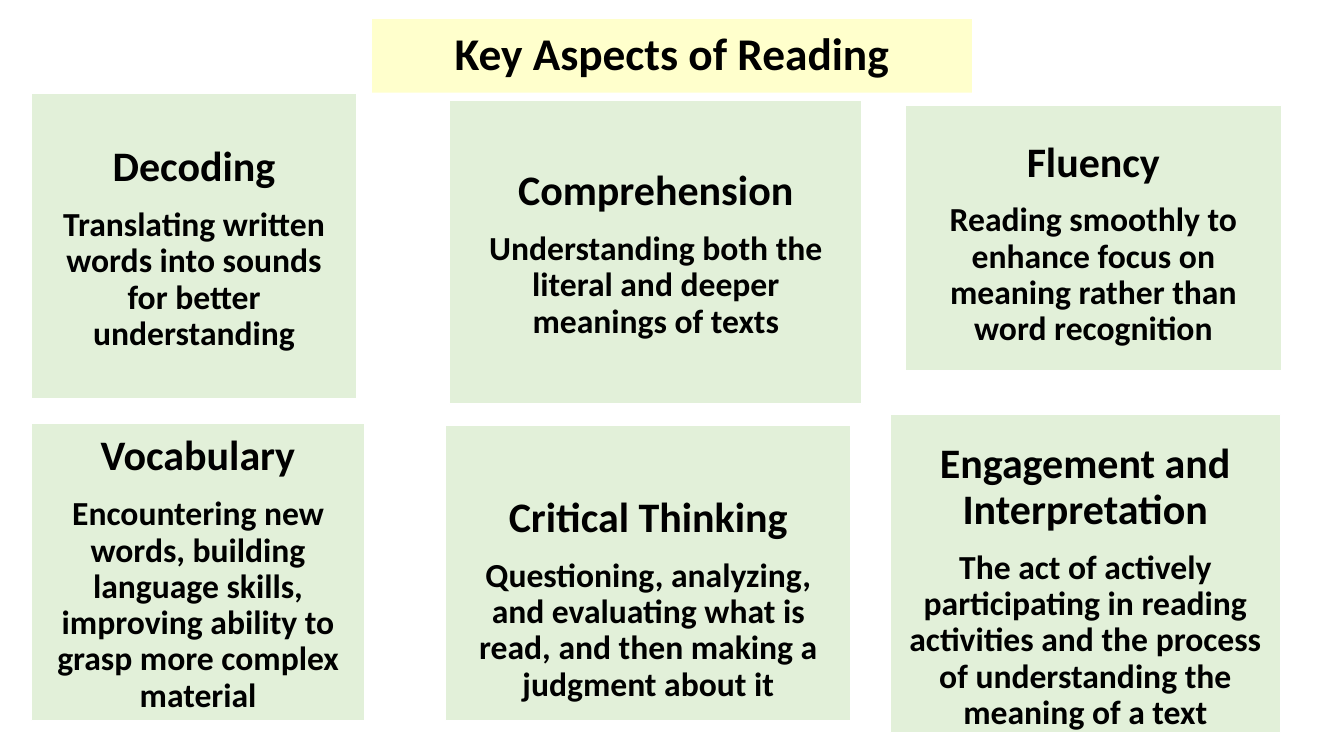
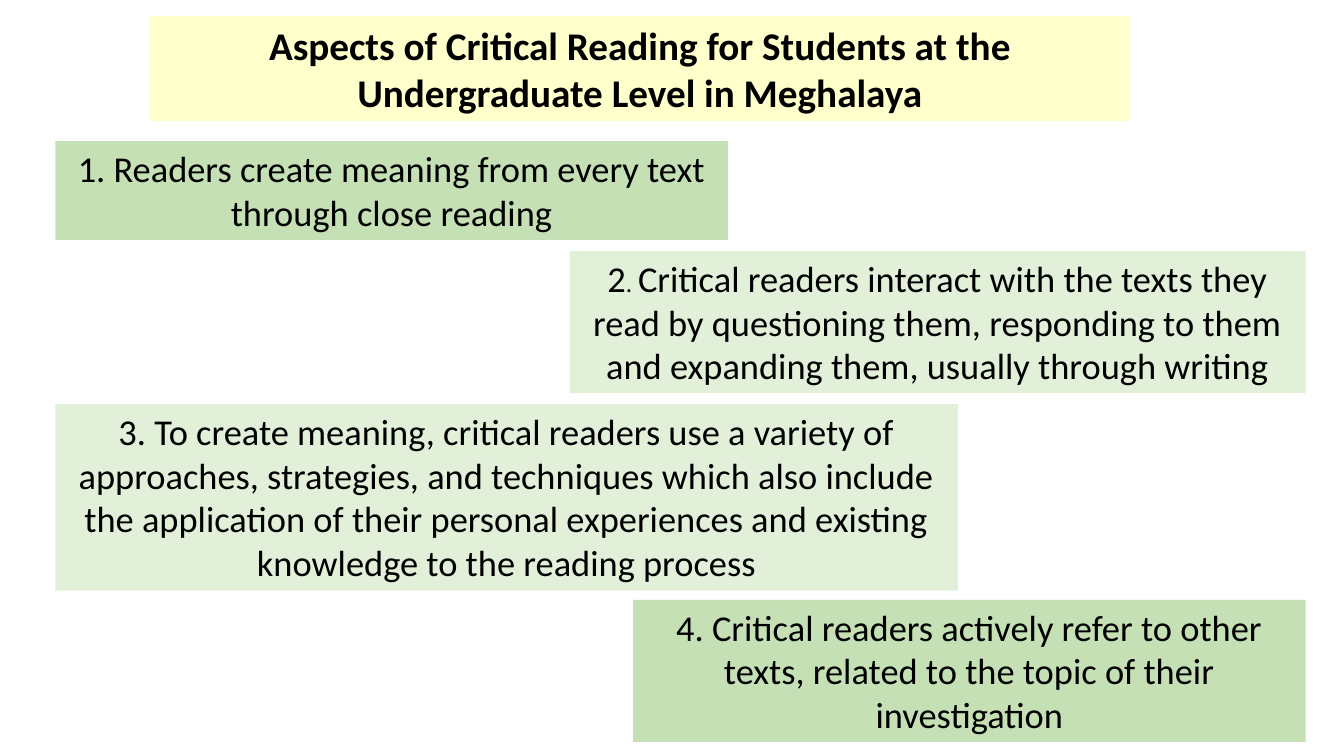
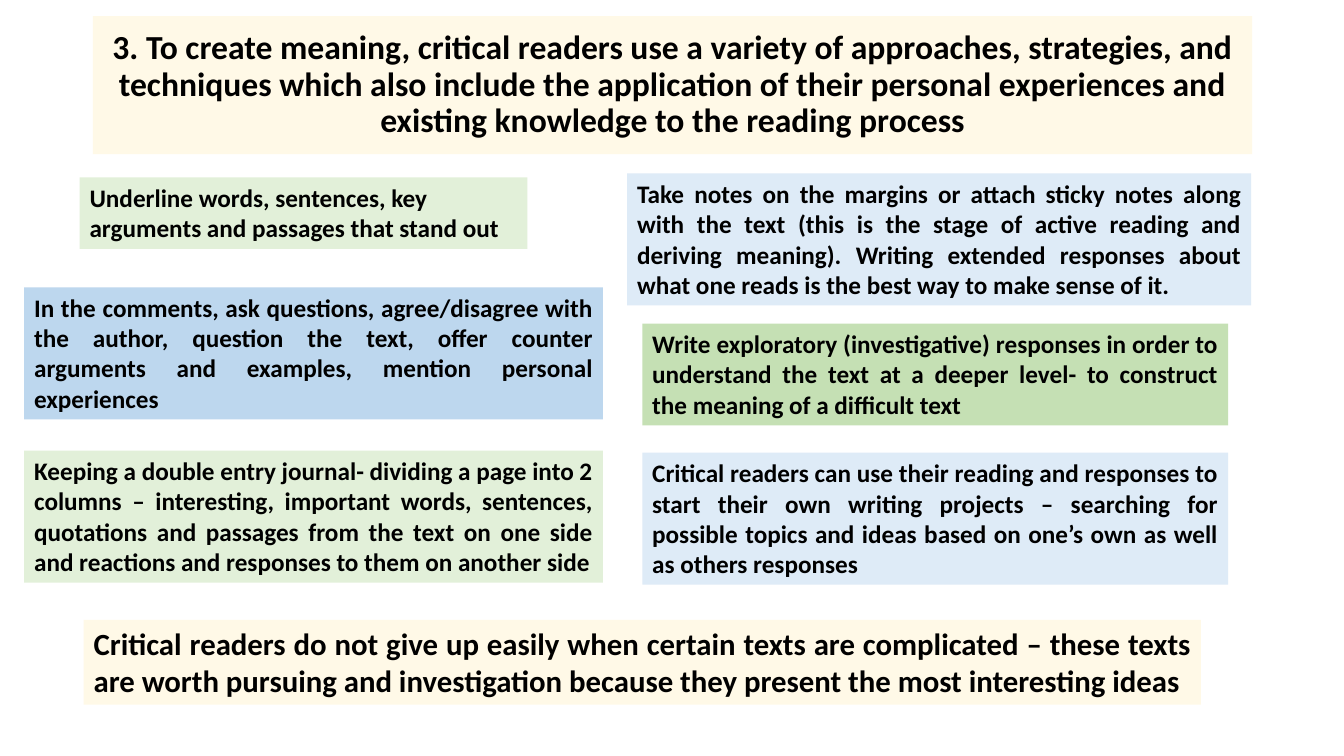
from dataclasses import dataclass

from pptx import Presentation
from pptx.dml.color import RGBColor
from pptx.enum import shapes, text
from pptx.util import Inches, Pt


@dataclass(frozen=True)
class Theme:
    font: str = "Calibri"
    ink: str = "000000"
    white: str = "FFFFFF"
    yellow: str = "FFFFCC"
    cream: str = "FFF9E7"
    pale_green: str = "E2F0D9"
    green: str = "C5E0B4"
    pale_blue: str = "DEEBF7"
    blue: str = "BDD7EE"
    title: float = 32.4
    long_title: int = 28
    statement_title: int = 24
    card_heading: int = 30
    card_body: int = 24
    point: int = 26
    point_dot: int = 18
    strategy: int = 18
    closing: int = 22
    tight: float = 0.9
    card_gap: int = 12


THEME = Theme()
CENTER = text.PP_ALIGN.CENTER
LEFT = text.PP_ALIGN.LEFT
JUSTIFY = text.PP_ALIGN.JUSTIFY


def write(para, words, size, bold=False, align=CENTER, spacing=1.0, after=0):
    para.alignment = align
    para.line_spacing = spacing
    para.space_before = Pt(0)
    para.space_after = Pt(after)
    span = para.add_run()
    span.text = words
    span.font.name = THEME.font
    span.font.size = Pt(size)
    span.font.bold = bold
    span.font.color.rgb = RGBColor.from_string(THEME.ink)


class Builder:
    def __init__(self, theme):
        self.theme = theme
        self.deck = Presentation()
        self.deck.slide_width = Inches(13.33)
        self.deck.slide_height = Inches(7.5)
        self.page = None

    def new_page(self):
        self.page = self.deck.slides.add_slide(self.deck.slide_layouts[5])

    def paint(self, box, fill):
        box.fill.solid()
        box.fill.fore_color.rgb = RGBColor.from_string(fill)

    def title(self, area, words, fill, size, spacing=1.0):
        box = self.page.shapes.title
        box.left, box.top, box.width, box.height = map(Inches, area)
        self.paint(box, fill)
        frame = box.text_frame
        frame.word_wrap = True
        frame.auto_size = text.MSO_AUTO_SIZE.NONE
        frame.vertical_anchor = text.MSO_ANCHOR.MIDDLE
        write(frame.paragraphs[0], words, size, bold=True, spacing=spacing)

    def card(self, area, heading, body, drop=0, inset=0.12):
        box = self.page.shapes.add_shape(
            shapes.MSO_SHAPE.RECTANGLE, *map(Inches, area))
        box.shadow.inherit = False
        self.paint(box, self.theme.pale_green)
        box.line.color.rgb = RGBColor.from_string(self.theme.white)
        box.line.width = Pt(1)
        frame = box.text_frame
        frame.word_wrap = True
        frame.vertical_anchor = text.MSO_ANCHOR.MIDDLE
        frame.margin_left = frame.margin_right = Inches(inset)
        frame.margin_top, frame.margin_bottom = Inches(drop), Inches(0)
        write(frame.paragraphs[0], heading, self.theme.card_heading, bold=True,
              spacing=self.theme.tight, after=self.theme.card_gap)
        write(frame.add_paragraph(), body, self.theme.card_body, bold=True,
              spacing=self.theme.tight)

    def panel(self, area, fill, *spans, **style):
        box = self.page.shapes.add_textbox(*map(Inches, area))
        self.paint(box, fill)
        box.text_frame.word_wrap = True
        for words, size in spans:
            write(box.text_frame.paragraphs[0], words, size, **style)


def key_aspects(builder):
    theme = builder.theme
    builder.new_page()
    builder.title((3.69, 0.19, 5.95, 0.73), "Key Aspects of Reading",
                  theme.yellow, theme.title, theme.tight)
    builder.card((0.31, 0.93, 3.23, 3.03), "Decoding",
                 "Translating written words into sounds for better understanding",
                 drop=0.05)
    builder.card((4.46, 1, 4.09, 3.01), "Comprehension",
                 "Understanding both the literal and deeper meanings of texts",
                 drop=0.05)
    builder.card((8.98, 1.05, 3.73, 2.63), "Fluency",
                 "Reading smoothly to enhance focus on meaning rather than "
                 "word recognition", drop=0.12)
    builder.card((0.31, 4.2, 3.31, 2.95), "Vocabulary",
                 "Encountering new words, building language skills, improving "
                 "ability to grasp more complex material", drop=0.05)
    builder.card((4.42, 4.22, 4.02, 2.93), "Critical Thinking",
                 "Questioning, analyzing, and evaluating what is read, and then "
                 "making a judgment about it", drop=0.53, inset=0.15)
    builder.card((8.83, 4.11, 3.87, 3.16), "Engagement and Interpretation",
                 "The act of actively participating in reading activities and the "
                 "process of understanding the meaning of a text",
                 drop=0.27, inset=0.15)


STATEMENT = (
    "3. To create meaning, critical readers use a variety of approaches, "
    "strategies, and techniques which also include the application of their "
    "personal experiences and existing knowledge to the reading process")


def critical_reading(builder):
    theme = builder.theme
    builder.new_page()
    builder.title((1.48, 0.16, 9.73, 1.04),
                  "Aspects of Critical Reading for Students at the "
                  "Undergraduate Level in Meghalaya",
                  theme.yellow, theme.long_title)
    builder.panel((0.55, 1.4, 6.67, 0.98), theme.green,
                  ("1. Readers create meaning from every text through close "
                   "reading", theme.point))
    builder.panel((5.65, 2.49, 7.3, 1.41), theme.pale_green,
                  ("2", theme.point), (". ", theme.point_dot),
                  ("Critical readers interact with the texts they read by "
                   "questioning them, responding to them and expanding them, "
                   "usually through writing", theme.point))
    builder.panel((0.55, 4.01, 8.95, 1.85), theme.pale_green,
                  (STATEMENT, theme.point))
    builder.panel((6.28, 5.95, 6.67, 1.41), theme.green,
                  ("4. Critical readers actively refer to other texts, related "
                   "to the topic of their investigation", theme.point))


def strategies(builder):
    theme = builder.theme
    builder.new_page()
    builder.title((0.92, 0.16, 11.5, 1.37), STATEMENT,
                  theme.cream, theme.statement_title, theme.tight)
    panels = [
        ((6.22, 1.72, 6.19, 1.31), theme.pale_blue, JUSTIFY,
         "Take notes on the margins or attach sticky notes along with the text "
         "(this is the stage of active reading and deriving meaning). Writing "
         "extended responses about what one reads is the best way to make sense "
         "of it."),
        ((0.79, 1.76, 4.44, 0.71), theme.pale_green, LEFT,
         "Underline words, sentences, key arguments and passages that stand out"),
        ((0.24, 2.85, 5.74, 1.31), theme.blue, JUSTIFY,
         "In the comments, ask questions, agree/disagree with the author, "
         "question the text, offer counter arguments and examples, mention "
         "personal experiences"),
        ((6.37, 3.21, 5.81, 1.01), theme.green, JUSTIFY,
         "Write exploratory (investigative) responses in order to understand "
         "the text at a deeper level- to construct the meaning of a difficult "
         "text"),
        ((6.37, 4.49, 5.81, 1.31), theme.pale_blue, JUSTIFY,
         "Critical readers can use their reading and responses to start their "
         "own writing projects – searching for possible topics and ideas based "
         "on one’s own as well as others responses"),
        ((0.24, 4.47, 5.74, 1.31), theme.pale_green, JUSTIFY,
         "Keeping a double entry journal- dividing a page into 2 columns – "
         "interesting, important words, sentences, quotations and passages from "
         "the text on one side and reactions and responses to them on another "
         "side"),
    ]
    for area, fill, align, words in panels:
        builder.panel(area, fill, (words, theme.strategy), bold=True, align=align)
    builder.panel((0.83, 6.15, 11.08, 0.84), theme.cream,
                  ("Critical readers do not give up easily when certain texts are "
                   "complicated – these texts are worth pursuing and "
                   "investigation because they present the most interesting "
                   "ideas", theme.closing), bold=True, align=JUSTIFY)


def main():
    builder = Builder(THEME)
    key_aspects(builder)
    critical_reading(builder)
    strategies(builder)
    builder.deck.save("out.pptx")


if __name__ == "__main__":
    main()
